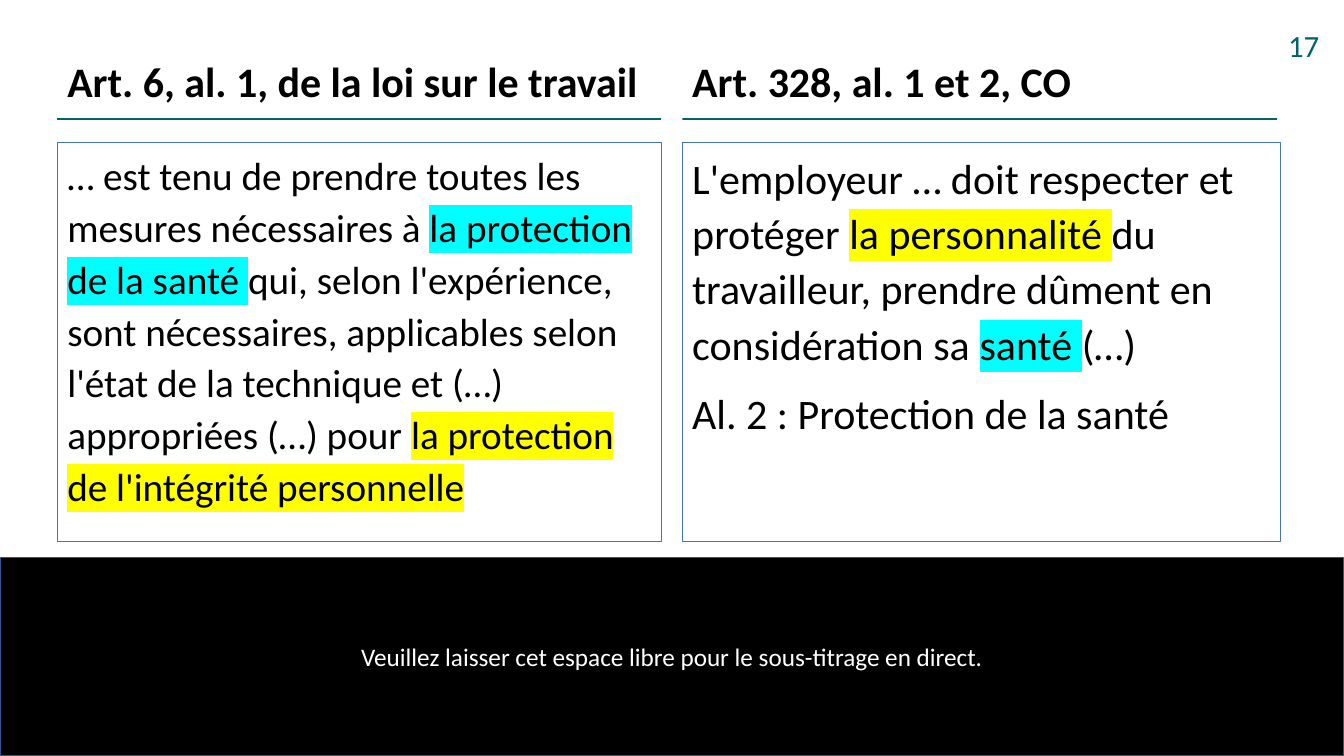
import pptx
import pptx.util
import pptx.dml.color
import pptx.enum.shapes
import pptx.enum.text
import pptx.oxml.ns
from lxml import etree

Pt = pptx.util.Pt
FONT = "Calibri"
COLORS = {
    "black": "000000",
    "white": "FFFFFF",
    "teal": "016469",
    "frame": "4472C4",
    "band_line": "325491",
    "health": "00FFFF",
    "personality": "FFFF00",
}
SLIDE_WIDTH, SLIDE_HEIGHT = 960, 540
ARTICLES = [
    {
        "box": (41, 32.4, 431.3, 354.2),
        "heading": "Art. 6, al. 1, de la loi sur le travail",
        "size": 28,
        "body": [[
            ("… est tenu de prendre toutes les mesures nécessaires à ", None),
            ("la protection de la santé ", "health"),
            ("qui, selon l'expérience, sont nécessaires, applicables selon l'état "
             "de la technique et (…) appropriées (…) pour ", None),
            ("la protection de l'intégrité personnelle", "personality"),
        ]],
    },
    {
        "box": (487.4, 32.4, 427.3, 354.2),
        "heading": "Art. 328, al. 1 et 2, CO",
        "size": 30,
        "body": [
            [
                ("L'employeur … doit respecter et protéger ", None),
                ("la personnalité ", "personality"),
                ("du travailleur, prendre dûment en considération sa ", None),
                ("santé ", "health"),
                ("(…)", None),
            ],
            [("Al. 2 : Protection de la santé", None)],
        ],
    },
]


def rgb(name):
    return pptx.dml.color.RGBColor.from_string(COLORS[name])


def add_box(slide, box, fill=None, line=None, line_width=0.75):
    shape = slide.shapes.add_shape(
        pptx.enum.shapes.MSO_SHAPE.RECTANGLE, *[Pt(length) for length in box])
    shape.shadow.inherit = False
    if fill:
        shape.fill.solid()
        shape.fill.fore_color.rgb = rgb(fill)
    else:
        shape.fill.background()
    if line:
        shape.line.color.rgb = rgb(line)
        shape.line.width = Pt(line_width)
    else:
        shape.line.fill.background()
    return shape


def highlight(run, color):
    properties = run._r.get_or_add_rPr()
    mark = etree.SubElement(properties, pptx.oxml.ns.qn("a:highlight"))
    etree.SubElement(mark, pptx.oxml.ns.qn("a:srgbClr"), val=COLORS[color])


def write(shape, paragraphs, size, color="black", bold=False, align="LEFT",
          anchor="TOP", line_spacing=1.0):
    frame = shape.text_frame
    frame.word_wrap = True
    frame.vertical_anchor = getattr(pptx.enum.text.MSO_ANCHOR, anchor)
    for index, parts in enumerate(paragraphs):
        paragraph = frame.add_paragraph() if index else frame.paragraphs[0]
        paragraph.alignment = getattr(pptx.enum.text.PP_ALIGN, align)
        paragraph.line_spacing = line_spacing
        if index:
            paragraph.space_before = Pt(10)
        paragraph.font.name = FONT
        paragraph.font.size = Pt(size)
        paragraph.font.bold = bold
        paragraph.font.color.rgb = rgb(color)
        for text, mark in parts:
            run = paragraph.add_run()
            run.text = text
            if mark:
                highlight(run, mark)


def add_text(slide, box, text, size, **style):
    shape = slide.shapes.add_textbox(*[Pt(length) for length in box])
    write(shape, [[(text, None)]], size, **style)


def add_caption_band(slide, left, top, width, height):
    band = add_box(slide, (left, top, width, height), "black", "band_line", 1)
    write(band, [[("Veuillez laisser cet espace libre pour le sous-titrage en direct.", None)]],
          18, "white", align="CENTER", anchor="MIDDLE")


def add_heading_rule(slide, left, top, width, gap_left, gap_width):
    rule = slide.shapes.add_connector(
        pptx.enum.shapes.MSO_CONNECTOR.STRAIGHT,
        Pt(left), Pt(top), Pt(left + width), Pt(top))
    rule.line.color.rgb = rgb("teal")
    rule.line.width = Pt(1.2)
    etree.SubElement(rule._element.spPr, pptx.oxml.ns.qn("a:effectLst"))
    # White gap between the two columns
    add_box(slide, (gap_left, top - 5, gap_width, 10), "white")


def add_article(slide, left, top, width, height, heading, body, size):
    add_text(slide, (left, top, width, 57.6), heading, 30, bold=True, line_spacing=1.1)
    body_offset = 69.1
    frame = add_box(slide, (left, top + body_offset, width, height - body_offset), line="frame")
    write(frame, body, size, line_spacing=1.1)


def main():
    presentation = pptx.Presentation()
    presentation.slide_width = Pt(SLIDE_WIDTH)
    presentation.slide_height = Pt(SLIDE_HEIGHT)
    slide = presentation.slides.add_slide(presentation.slide_layouts[6])

    # Caption area and slide number
    add_caption_band(slide, 0, 398.2, SLIDE_WIDTH, SLIDE_HEIGHT - 398.2)
    add_text(slide, (913, 15.8, 38.9, 74.2), "17", 22, color="teal")

    # Rule under the headings, broken between the columns
    left, _, width, _ = ARTICLES[0]["box"]
    right_column = ARTICLES[1]["box"][0]
    add_heading_rule(slide, left, 85, 871.2, left + width, right_column - left - width)

    # The two articles of law
    for article in ARTICLES:
        add_article(slide, *article["box"], article["heading"], article["body"], article["size"])

    presentation.save("out.pptx")


if __name__ == "__main__":
    main()
